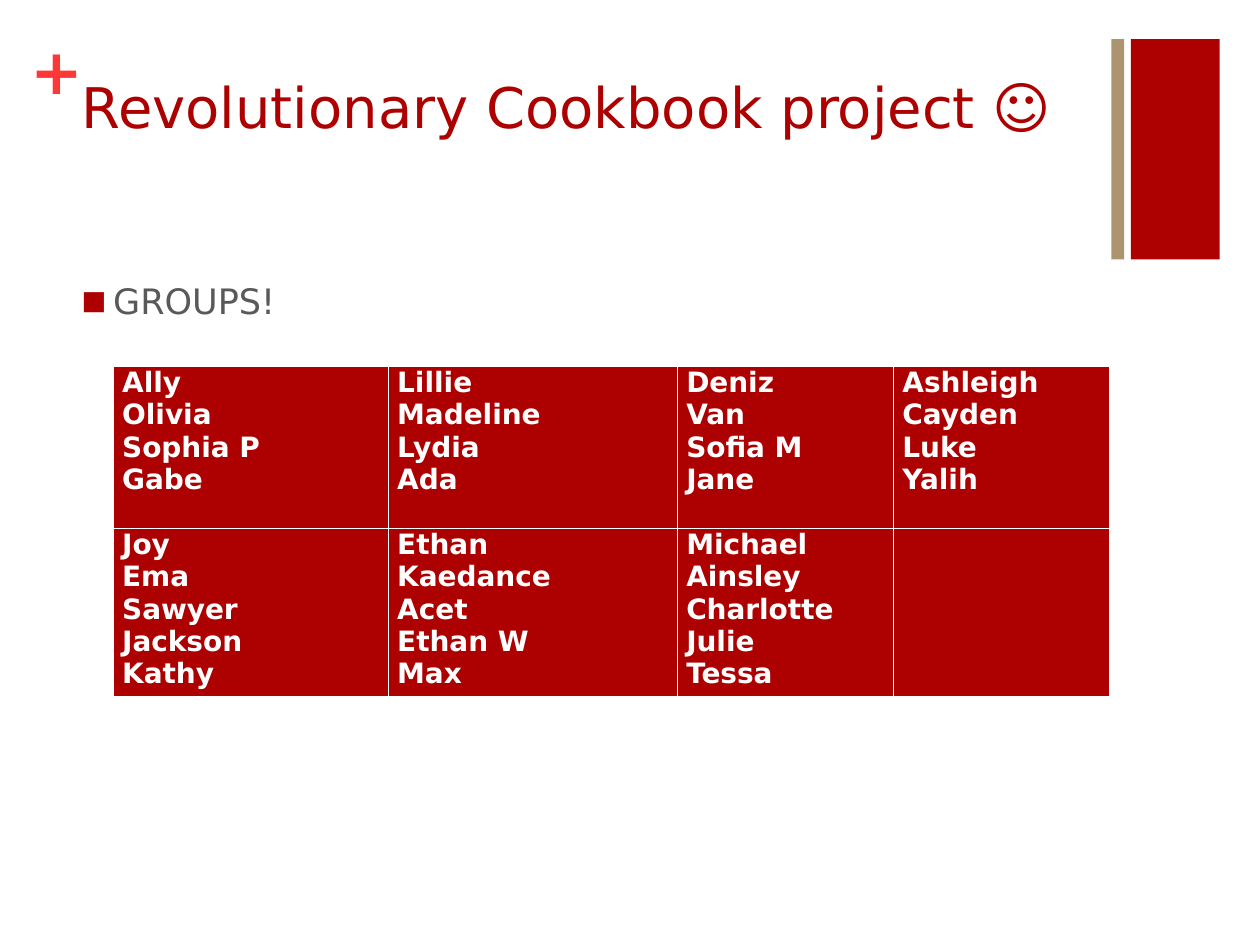
import dataclasses

import pptx
import pptx.dml.color
import pptx.enum.shapes
import pptx.enum.text
import pptx.oxml
import pptx.oxml.ns
import pptx.util

WIDE, HIGH = pptx.util.Inches(10), pptx.util.Inches(7.5)
COLS, ROWS = 100, 75
GROUPS = [
    [["Ally", "Olivia", "Sophia P", "Gabe"],
     ["Lillie", "Madeline", "Lydia", "Ada"],
     ["Deniz", "Van", "Sofia M", "Jane"],
     ["Ashleigh", "Cayden", "Luke", "Yalih"]],
    [["Joy", "Ema", "Sawyer", "Jackson", "Kathy"],
     ["Ethan", "Kaedance", "Acet", "Ethan W", "Max"],
     ["Michael", "Ainsley", "Charlotte", "Julie", "Tessa"],
     []],
]


@dataclasses.dataclass(frozen=True)
class Theme:
    """Hold the colours, the font and the type sizes."""
    red: str = "AD0101"
    rose: str = "FE3737"
    tan: str = "AC956E"
    gray: str = "595959"
    white: str = "FFFFFF"
    font: str = "DejaVu Sans"
    mark: int = 36
    title: int = 32
    body: int = 20
    cell: int = 16


LOOK = Theme()


def across(cols):
    """Turn grid columns into a length."""
    return round(WIDE * cols / COLS)


def down(rows):
    """Turn grid rows into a length."""
    return round(HIGH * rows / ROWS)


def place(box):
    """Turn a grid box into left, top, width and height."""
    left, top, wide, high = box
    return across(left), down(top), across(wide), down(high)


def assign(item, values):
    """Set each attribute named in a dict of format values."""
    for name, value in values.items():
        setattr(item, name, value)


def node(owner, tag, **attrs):
    """Append a drawing element with the given attributes."""
    child = pptx.oxml.parse_xml(f"<a:{tag} {pptx.oxml.ns.nsdecls('a')}/>")
    for name, value in attrs.items():
        child.set(name, str(value))
    owner.append(child)
    return child


def write(frame, lines, size, color, bold=False, pad=(0, 0)):
    """Fill a text frame with one paragraph for each line."""
    side, edge = across(pad[0]), down(pad[1])
    assign(frame, {
        "word_wrap": True,
        "margin_left": side, "margin_right": side,
        "margin_top": edge, "margin_bottom": edge,
        "vertical_anchor": pptx.enum.text.MSO_ANCHOR.TOP,
    })
    for i, line in enumerate(lines):
        para = frame.add_paragraph() if i else frame.paragraphs[0]
        run = para.add_run()
        run.text = line
        assign(run.font, {"name": LOOK.font, "size": pptx.util.Pt(size), "bold": bold})
        run.font.color.rgb = pptx.dml.color.RGBColor.from_string(color)


def label(slide, box, line, size, color, **style):
    """Add a text box with one line and return its paragraph."""
    frame = slide.shapes.add_textbox(*place(box)).text_frame
    write(frame, [line], size, color, **style)
    return frame.paragraphs[0]


def paint(fill, color):
    """Give a fill one solid colour."""
    fill.solid()
    fill.fore_color.rgb = pptx.dml.color.RGBColor.from_string(color)


def bars(slide, box):
    """Draw the thin and the wide bar in the corner box."""
    left, top, wide, high = box
    thin, gap = wide * 0.12, wide * 0.18
    for start, span, color in ((left, thin, LOOK.tan),
                               (left + gap, wide - gap, LOOK.red)):
        bar = slide.shapes.add_shape(pptx.enum.shapes.MSO_SHAPE.RECTANGLE,
                                     *place((start, top, span, high)))
        bar.shadow.inherit = False
        bar.line.fill.background()
        paint(bar.fill, color)


def head(slide, box):
    """Write the title, with the plus mark at its upper left."""
    left, top, _, _ = box
    label(slide, (left - 3.1, top - 2.8, 3.4, 6.1), "+", LOOK.mark, LOOK.rose, bold=True)
    label(slide, box, "Revolutionary Cookbook project ☺", LOOK.title, LOOK.red, pad=(1, 0.5))


def body(slide, box):
    """Write the bulleted line."""
    para = label(slide, box, "GROUPS!", LOOK.body, LOOK.gray, pad=(1, 0.5))
    para.space_before = pptx.util.Pt(20)
    props = para._p.get_or_add_pPr()
    props.set("marL", str(across(2.5)))
    props.set("indent", str(-across(2.5)))
    node(node(props, "buClr"), "srgbClr", val=LOOK.red)
    node(props, "buSzPct", val=75000)
    node(props, "buFont", typeface=LOOK.font)
    node(props, "buChar", char="■")


def rule(cell):
    """Draw a thin white line on each side of a cell."""
    props = cell._tc.get_or_add_tcPr()
    for side in ("lnL", "lnR", "lnT", "lnB"):
        line = node(props, side, w=pptx.util.Pt(1))
        node(node(line, "solidFill"), "srgbClr", val=LOOK.white)


def roster(slide, box):
    """Build the table of groups, its columns sized by share."""
    shares = (0.276, 0.29, 0.217, 0.217)
    grid = slide.shapes.add_table(len(GROUPS), len(shares), *place(box)).table
    for col, share in zip(grid.columns, shares):
        col.width = across(box[2] * share)
    for r, row in enumerate(GROUPS):
        for c, names in enumerate(row):
            cell = grid.cell(r, c)
            rule(cell)
            paint(cell.fill, LOOK.red)
            assign(cell, {"margin_left": across(0.7), "margin_right": across(0.7),
                          "margin_top": 0, "margin_bottom": 0})
            write(cell.text_frame, names, LOOK.cell, LOOK.white, bold=True, pad=(0.7, 0))


def main():
    """Build the slide and save it."""
    deck = pptx.Presentation()
    assign(deck, {"slide_width": WIDE, "slide_height": HIGH})
    slide = deck.slides.add_slide(deck.slide_layouts[6])
    bars(slide, (88.2, 3.1, 8.6, 17.5))
    head(slide, (5.5, 5.3, 82.6, 12.2))
    body(slide, (5.5, 21.7, 82.6, 45.3))
    roster(slide, (9, 29.1, 79.1, 25.7))
    deck.save("out.pptx")


if __name__ == "__main__":
    main()
